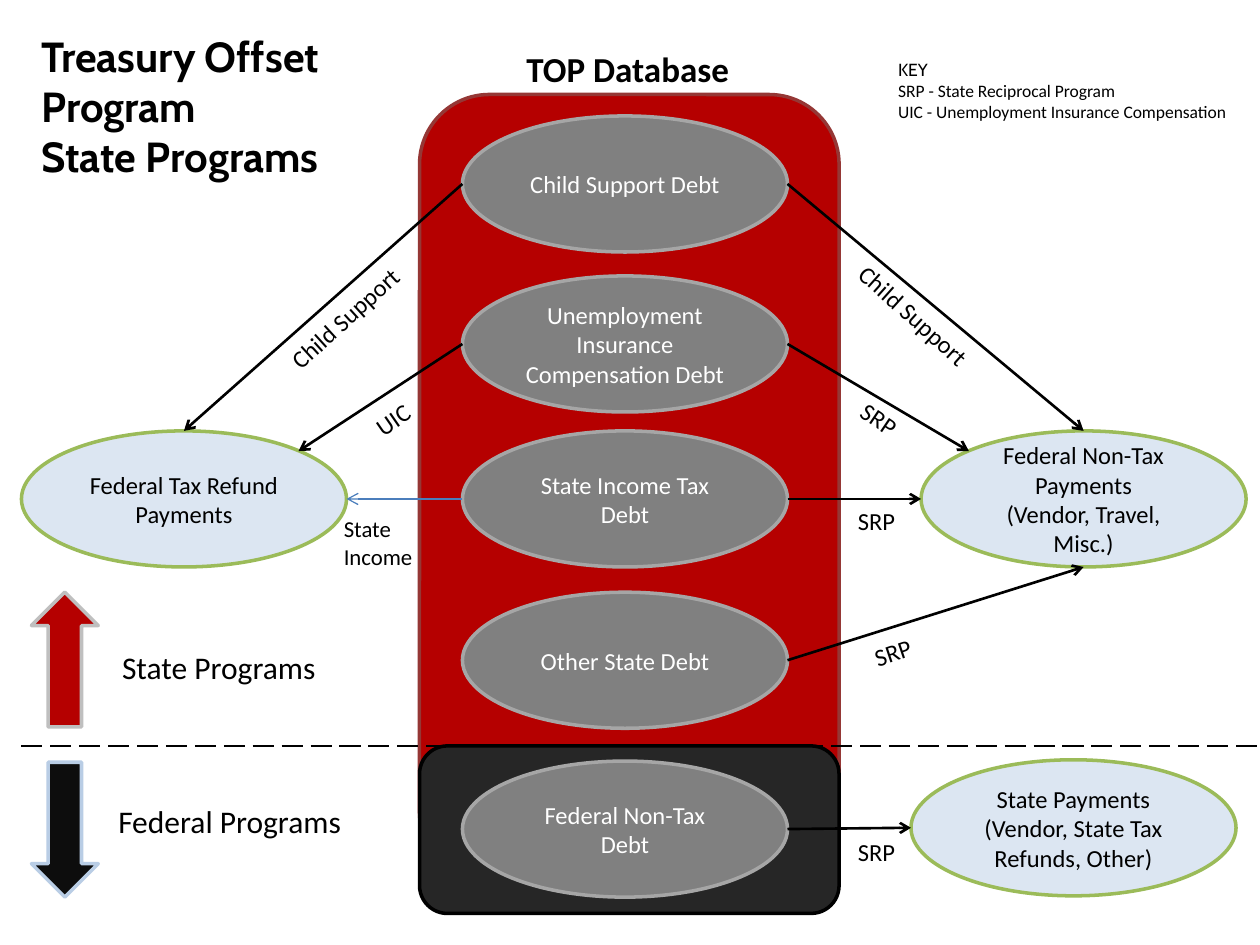
from lxml import etree
from pptx import Presentation
from pptx.dml.color import RGBColor
from pptx.enum.dml import MSO_LINE
from pptx.enum.shapes import MSO_CONNECTOR, MSO_SHAPE
from pptx.enum.text import MSO_ANCHOR, MSO_AUTO_SIZE, PP_ALIGN
from pptx.oxml.ns import qn
from pptx.util import Emu, Pt

ELLIPSE, ROUNDED = MSO_SHAPE.OVAL, MSO_SHAPE.ROUNDED_RECTANGLE
UP, DOWN = MSO_SHAPE.UP_ARROW, MSO_SHAPE.DOWN_ARROW
STRAIGHT, LONG_DASH = MSO_CONNECTOR.STRAIGHT, MSO_LINE.LONG_DASH
CENTER, LEFT = PP_ALIGN.CENTER, PP_ALIGN.LEFT
MIDDLE, GROW = MSO_ANCHOR.MIDDLE, MSO_AUTO_SIZE.SHAPE_TO_FIT_TEXT

PX = 9144  # EMU per px, 100 px to the inch


class Theme:
    heading_font, body_font = "Cabin", "Calibri"
    title, header, section, body, small, key = 24, 20, 18, 14, 13, 10
    black, white = "000000", "FFFFFF"
    red, red_edge = "B50000", "953735"
    charcoal, ink = "262626", "0D0D0D"
    debt, debt_edge = "808080", "A6A6A6"
    payment, payment_edge = "DCE6F2", "9BBB59"
    up_edge, down_edge, blue_line = "BFBFBF", "B9CDE5", "4B7EBC"


def put_text(sp, text, size=Theme.body, color=Theme.black, font=Theme.body_font,
             bold=False, align=LEFT, wrap=True):
    tf = sp.text_frame
    tf.word_wrap = wrap
    for i, line in enumerate(text.split("\n")):
        p = tf.paragraphs[0] if i == 0 else tf.add_paragraph()
        p.alignment = align
        r = p.add_run()
        r.text = line
        r.font.size, r.font.name, r.font.bold = Pt(size), font, bold
        r.font.color.rgb = RGBColor.from_string(color)
    return tf


def add_line(x1, y1, x2, y2, color=Theme.black, width=1.5):
    line = s.shapes.add_connector(STRAIGHT, *(Emu(v * PX) for v in (x1, y1, x2, y2)))
    line.line.color.rgb = RGBColor.from_string(color)
    line.line.width = Pt(width)
    etree.SubElement(line._element.spPr, qn("a:effectLst"))
    return line


prs = Presentation()
prs.slide_width, prs.slide_height = Emu(1000 * PX), Emu(750 * PX)
s = prs.slides.add_slide(prs.slide_layouts[6])

# Database panels, debts inside them, payments at the sides, direction arrows
DEBT_X, OVAL_W, OVAL_H = 367, 258, 108
shapes = [
    (ROUNDED, 333, 75, 333, 625, Theme.red, Theme.red_edge, ""),
    (ROUNDED, 333, 592, 333, 133, Theme.charcoal, Theme.black, ""),
    (UP, 25, 470, 53, 107, Theme.red, Theme.up_edge, ""),
    (DOWN, 25, 605, 53, 107, Theme.ink, Theme.down_edge, ""),
]
for y, text in [
    (92, "Child Support Debt"),
    (219, "Unemployment Insurance Compensation Debt"),
    (342, "State Income Tax Debt"),
    (470, "Other State Debt"),
    (604, "Federal Non-Tax Debt"),
]:
    shapes.append((ELLIPSE, DEBT_X, y, OVAL_W, OVAL_H, Theme.debt, Theme.debt_edge, text))
for x, y, text in [
    (17, 342, "Federal Tax Refund Payments"),
    (731, 342, "Federal Non-Tax Payments\n(Vendor, Travel, Misc.)"),
    (723, 603, "State Payments\n(Vendor, State Tax Refunds, Other)"),
]:
    shapes.append((ELLIPSE, x, y, OVAL_W, OVAL_H, Theme.payment, Theme.payment_edge, text))

for kind, x, y, w, h, fill, edge, text in shapes:
    sp = s.shapes.add_shape(kind, *(Emu(v * PX) for v in (x, y, w, h)))
    sp.shadow.inherit = False
    sp.fill.solid()
    sp.fill.fore_color.rgb = RGBColor.from_string(fill)
    sp.line.color.rgb = RGBColor.from_string(edge)
    sp.line.width = Pt(2)
    if text:
        color = Theme.white if fill == Theme.debt else Theme.black
        put_text(sp, text, color=color, align=CENTER).vertical_anchor = MIDDLE

# Flows from debts to payments
DEBT_RIGHT = DEBT_X + OVAL_W
flows = [
    add_line(DEBT_X, 146, 146, 342),
    add_line(DEBT_X, 273, 237, 358),
    add_line(DEBT_X, 396, 275, 396, color=Theme.blue_line, width=0.75),
    add_line(DEBT_RIGHT, 146, 860, 342),
    add_line(DEBT_RIGHT, 273, 769, 358),
    add_line(DEBT_RIGHT, 396, 731, 396),
    add_line(DEBT_RIGHT, 524, 860, 450),
    add_line(DEBT_RIGHT, 658, 723, 657),
]
for flow in flows:
    etree.SubElement(flow.line._get_or_add_ln(), qn("a:tailEnd"), type="arrow")

add_line(17, 592, 1000, 592).line.dash_style = LONG_DASH

# Headings, section names, flow labels and key
labels = [
    (23, 19, 369, 91, 0, "Treasury Offset Program\nState Programs",
     dict(size=Theme.title, font=Theme.heading_font, bold=True)),
    (408, 33, 184, 44, 0, "TOP Database", dict(size=Theme.header, bold=True, wrap=False)),
    (87, 509, 175, 40, 0, "State Programs", dict(size=Theme.section, wrap=False)),
    (84, 632, 199, 40, 0, "Federal Programs", dict(size=Theme.section, wrap=False)),
    (210, 235, 129, 34, 317.8, "Child Support", dict(wrap=False)),
    (288, 316, 48, 34, 325.3, "UIC", dict(wrap=False)),
    (263, 404, 75, 54, 0, "State\nIncome", dict(size=Theme.small, wrap=False)),
    (661, 234, 129, 34, 41.8, "Child Support", dict(wrap=False)),
]
for x, y, angle in [(673, 316, 34), (671, 397, 0), (684, 501, 341.4), (671, 659, 0)]:
    labels.append((x, y, 50, 34, angle, "SRP", dict(wrap=False)))
labels.append((703, 42, 289, 61, 0,
               "KEY\nSRP - State Reciprocal Program\nUIC - Unemployment Insurance Compensation",
               dict(size=Theme.key)))

for x, y, w, h, angle, text, style in labels:
    sp = s.shapes.add_textbox(*(Emu(v * PX) for v in (x, y, w, h)))
    sp.rotation = angle
    tf = put_text(sp, text, **style)
    tf.auto_size = GROW
    if text.startswith("KEY"):
        tf.paragraphs[0].runs[0].font.name = Theme.heading_font

prs.save("out.pptx")
